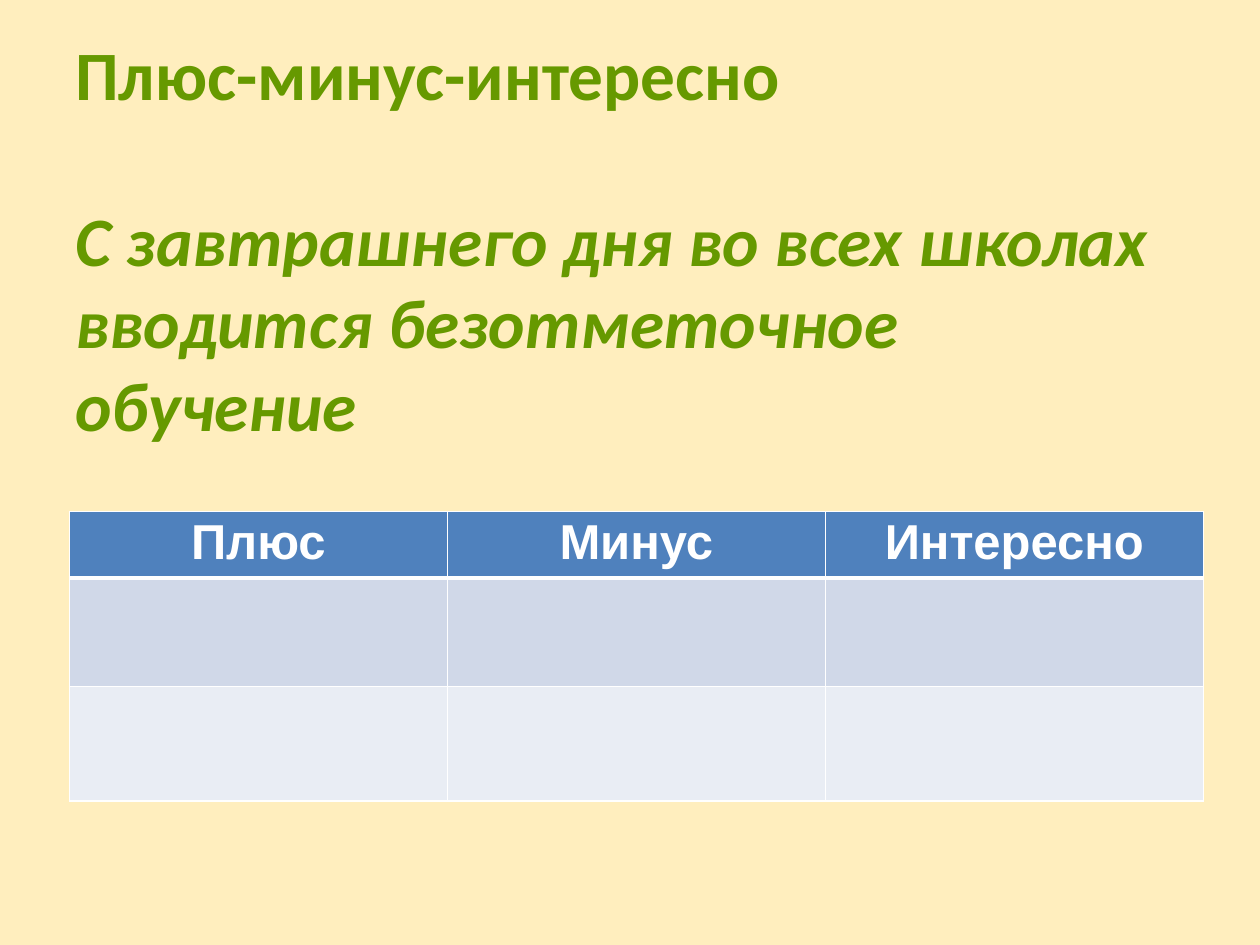
from pptx import Presentation
from pptx import util as u
from pptx.dml.color import RGBColor
from pptx.enum import text
from pptx.oxml import parse_xml
from pptx.oxml.ns import nsdecls

CREAM = RGBColor(0xFF, 0xEE, 0xBE)
GREEN = RGBColor(0x66, 0x99, 0x00)
WHITE = RGBColor(0xFF, 0xFF, 0xFF)
BLUE = RGBColor(0x4F, 0x81, 0xBD)
BANDS = [BLUE, RGBColor(0xD0, 0xD8, 0xE8), RGBColor(0xE9, 0xED, 0xF4)]

WIDE, HIGH = u.Inches(10), u.Inches(7.5)
HEADS = ["Плюс", "Минус", "Интересно"]
ROWS = [0.52, 0.86, 0.91]


def add_run(para, words, font, size, color, italic=None):
    run = para.add_run()
    run.text = words
    run.font.name = font
    run.font.size = u.Pt(size)
    run.font.bold = True
    run.font.italic = italic
    run.font.color.rgb = color


def add_title(slide):
    box = slide.shapes.add_textbox(
        int(WIDE * 0.05), int(HIGH * 0.03), int(WIDE * 0.9), int(HIGH * 0.46))
    frame = box.text_frame
    frame.word_wrap = True
    head = frame.paragraphs[0]
    head.space_after = u.Pt(48)
    add_run(head, "Плюс-минус-интересно", "Calibri", 39.6, GREEN)
    topic = frame.add_paragraph()
    add_run(topic, "С завтрашнего дня во всех школах вводится безотметочное обучение",
            "Calibri", 39.6, GREEN, True)
    for para in frame.paragraphs:
        para.line_spacing = 0.99


def set_edges(cell, top, base):
    """Draw white borders; top and base are widths in points."""
    props = cell._tc.get_or_add_tcPr()
    sides = {"lnL": 1, "lnR": 1, "lnT": top, "lnB": base}
    for spot, (tag, size) in enumerate(sides.items()):
        props.insert(spot, parse_xml(
            f'<a:{tag} {nsdecls("a")} w="{u.Pt(size)}"><a:solidFill>'
            f'<a:srgbClr val="{WHITE}"/></a:solidFill></a:{tag}>'))


def add_grid(slide):
    frame = slide.shapes.add_table(
        len(ROWS), len(HEADS), int(WIDE * 0.055), u.Inches(4.06),
        int(WIDE * 0.9), u.Inches(sum(ROWS)))
    table = frame.table
    for row, (high, fill) in enumerate(zip(ROWS, BANDS)):
        table.rows[row].height = u.Inches(high)
        for col, head in enumerate(HEADS):
            cell = table.cell(row, col)
            cell.fill.solid()
            cell.fill.fore_color.rgb = fill
            cell.margin_top = cell.margin_bottom = u.Inches(0.03)
            set_edges(cell, 3 if row == 1 else 1, 3 if row == 0 else 1)
            if row == 0:
                para = cell.text_frame.paragraphs[0]
                para.alignment = text.PP_ALIGN.CENTER
                add_run(para, head, "Arial", 28, WHITE)


def main():
    deck = Presentation()
    deck.slide_width, deck.slide_height = WIDE, HIGH
    slide = deck.slides.add_slide(deck.slide_layouts[6])
    back = slide.background.fill
    back.solid()
    back.fore_color.rgb = CREAM
    add_title(slide)
    add_grid(slide)
    deck.save("out.pptx")


if __name__ == "__main__":
    main()
